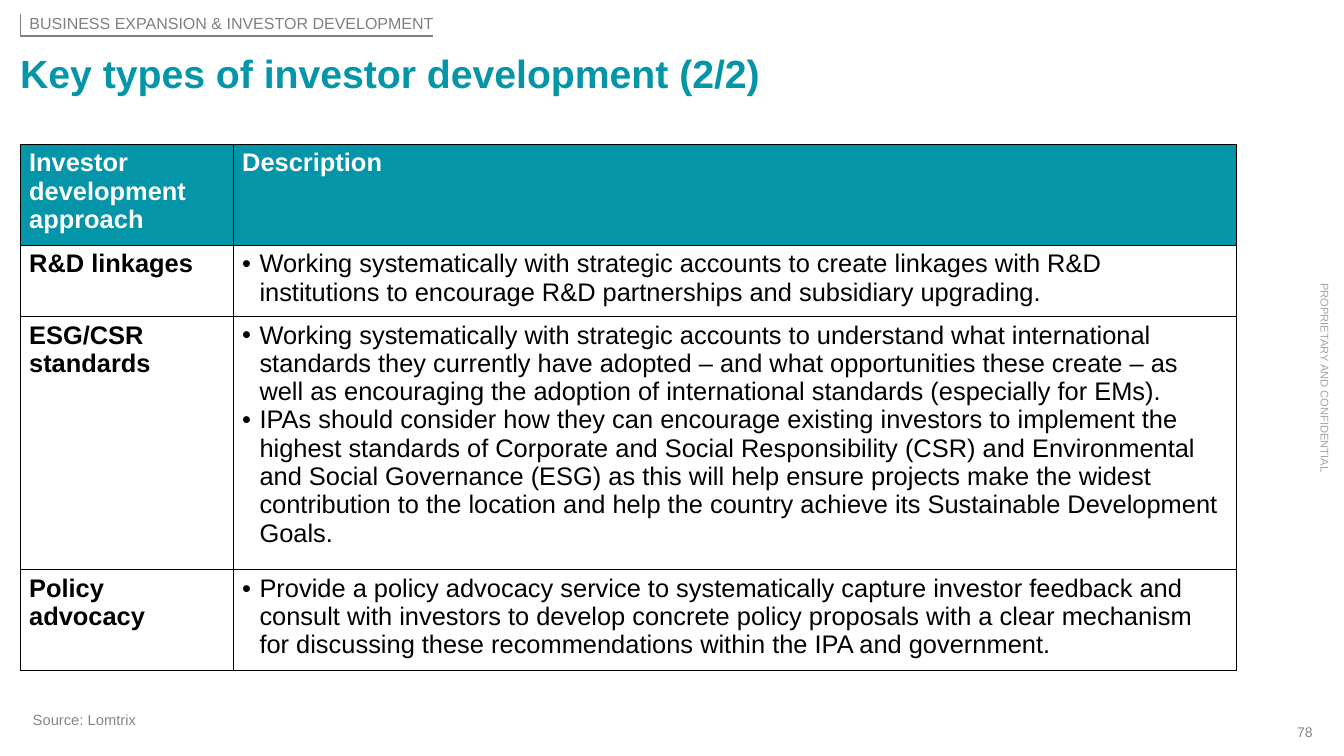
from lxml import etree
from pptx import Presentation
from pptx.dml.color import RGBColor
from pptx.enum import shapes, text
from pptx.oxml import ns
from pptx.util import Cm, Pt

COLORS = {"teal": "0495A8", "white": "FFFFFF", "black": "000000",
          "gray": "808080", "note": "878787", "pale": "A5A5A5"}
FONT = "Arial"
SECTION = "BUSINESS EXPANSION & INVESTOR DEVELOPMENT"
TITLE = "Key types of investor development (2/2)"
SOURCE = "Source: Lomtrix"
CONFIDENTIAL = "PROPRIETARY AND CONFIDENTIAL"
PAGE = "78"
HEADERS = ("Investor development approach", "Description")
APPROACHES = [
    ("R&D linkages", [
        "Working systematically with strategic accounts to create linkages with R&D "
        "institutions to encourage R&D partnerships and subsidiary upgrading."]),
    ("ESG/CSR standards", [
        "Working systematically with strategic accounts to understand what international "
        "standards they currently have adopted – and what opportunities these create – as "
        "well as encouraging the adoption of international standards (especially for EMs).",
        "IPAs should consider how they can encourage existing investors to implement the "
        "highest standards of Corporate and Social Responsibility (CSR) and Environmental "
        "and Social Governance (ESG) as this will help ensure projects make the widest "
        "contribution to the location and help the country achieve its Sustainable "
        "Development Goals."]),
    ("Policy advocacy", [
        "Provide a policy advocacy service to systematically capture investor feedback and "
        "consult with investors to develop concrete policy proposals with a clear mechanism "
        "for discussing these recommendations within the IPA and government."]),
]
LEFT = 0.56
TAG_TOP, TAG_WIDTH, TAG_HEIGHT = 0.38, 11.48, 0.61
TABLE_TOP = 4.01
COL_WIDTHS = (5.92, 27.88)
ROW_HEIGHTS = (2.8, 1.98, 7.04, 2.81)
BULLET_INDENT = 0.48


def rgb(name):
    return RGBColor.from_string(COLORS[name])


def write(tf, lines, size=20, color="black", bold=False, align="LEFT", bullet=False):
    """Fill a text frame with one formatted paragraph per line."""
    for i, line in enumerate(lines):
        p = tf.paragraphs[0] if i == 0 else tf.add_paragraph()
        p.alignment = getattr(text.PP_ALIGN, align)
        if bullet:
            pPr = p._p.get_or_add_pPr()
            pPr.set("marL", str(Cm(BULLET_INDENT)))
            pPr.set("indent", str(-Cm(BULLET_INDENT)))
            etree.SubElement(pPr, ns.qn("a:buFont"), typeface=FONT)
            etree.SubElement(pPr, ns.qn("a:buChar"), char="•")
        r = p.add_run()
        r.text = line
        r.font.name, r.font.size, r.font.bold = FONT, Pt(size), bold
        r.font.color.rgb = rgb(color)


def add_label(slide, line, box, insets=(0, 0, 0, 0), rotation=0, wrap=True, **fmt):
    sp = slide.shapes.add_textbox(*map(Cm, box))
    sp.rotation = rotation
    tf = sp.text_frame
    tf.word_wrap = wrap
    tf.vertical_anchor = text.MSO_ANCHOR.MIDDLE
    tf.margin_left, tf.margin_top, tf.margin_right, tf.margin_bottom = map(Cm, insets)
    write(tf, [line], **fmt)


def add_rule(slide, x1, y1, x2, y2, width):
    line = slide.shapes.add_connector(
        shapes.MSO_CONNECTOR.STRAIGHT, *map(Cm, (x1, y1, x2, y2)))
    line.line.color.rgb = rgb("gray")
    line.line.width = Pt(width)
    etree.SubElement(line._element.spPr, ns.qn("a:effectLst"))


def style_cell(cell, fill):
    tcPr = cell._tc.get_or_add_tcPr()
    for side in ("lnL", "lnR", "lnT", "lnB"):
        ln = etree.SubElement(tcPr, ns.qn(f"a:{side}"), w=str(Pt(1)))
        solid = etree.SubElement(ln, ns.qn("a:solidFill"))
        etree.SubElement(solid, ns.qn("a:srgbClr"), val=COLORS["black"])
    if fill:
        cell.fill.solid()
        cell.fill.fore_color.rgb = rgb(fill)
    else:
        cell.fill.background()
    cell.margin_left = cell.margin_right = Cm(0.25)
    cell.margin_top = cell.margin_bottom = Cm(0.13)


def add_approach_table(slide):
    table = slide.shapes.add_table(
        len(ROW_HEIGHTS), len(COL_WIDTHS), Cm(LEFT), Cm(TABLE_TOP),
        Cm(sum(COL_WIDTHS)), Cm(sum(ROW_HEIGHTS))).table
    table.horz_banding = False
    for col, width in zip(table.columns, COL_WIDTHS):
        col.width = Cm(width)
    for row, height in zip(table.rows, ROW_HEIGHTS):
        row.height = Cm(height)
    for c, header in enumerate(HEADERS):
        style_cell(table.cell(0, c), "teal")
        write(table.cell(0, c).text_frame, [header], color="white", bold=True)
    for i, (name, points) in enumerate(APPROACHES, 1):
        for c in range(len(COL_WIDTHS)):
            style_cell(table.cell(i, c), None)
        write(table.cell(i, 0).text_frame, [name], bold=True)
        write(table.cell(i, 1).text_frame, points, bullet=True)


def main():
    prs = Presentation()
    prs.slide_width, prs.slide_height = Cm(37.34), Cm(21.01)
    slide = prs.slides.add_slide(prs.slide_layouts[6])
    add_label(slide, PAGE, (35.71, 20.09, 0.76, 0.48), size=11, color="note", align="RIGHT")
    add_label(slide, CONFIDENTIAL, (34.11, 10.31, 5.41, 0.38), rotation=90, wrap=False,
              size=8.8, color="pale", align="CENTER")
    add_label(slide, TITLE, (LEFT, 1.37, 35.69, 1.32), size=30.9, color="teal", bold=True)
    add_label(slide, SOURCE, (0.66, 19.63, 14.07, 0.76), insets=(0.25, 0.13, 0.25, 0.13),
              size=11.6, color="note")
    add_approach_table(slide)
    add_label(slide, SECTION, (LEFT, TAG_TOP, TAG_WIDTH, TAG_HEIGHT),
              insets=(0.1, 0, 0, 0.08), wrap=False, size=12.6, color="gray", align="RIGHT")
    bottom = TAG_TOP + TAG_HEIGHT
    add_rule(slide, LEFT + TAG_WIDTH, bottom, LEFT, bottom, 1.5)
    add_rule(slide, LEFT, TAG_TOP, LEFT, bottom, 0.75)
    prs.save("out.pptx")


if __name__ == "__main__":
    main()
